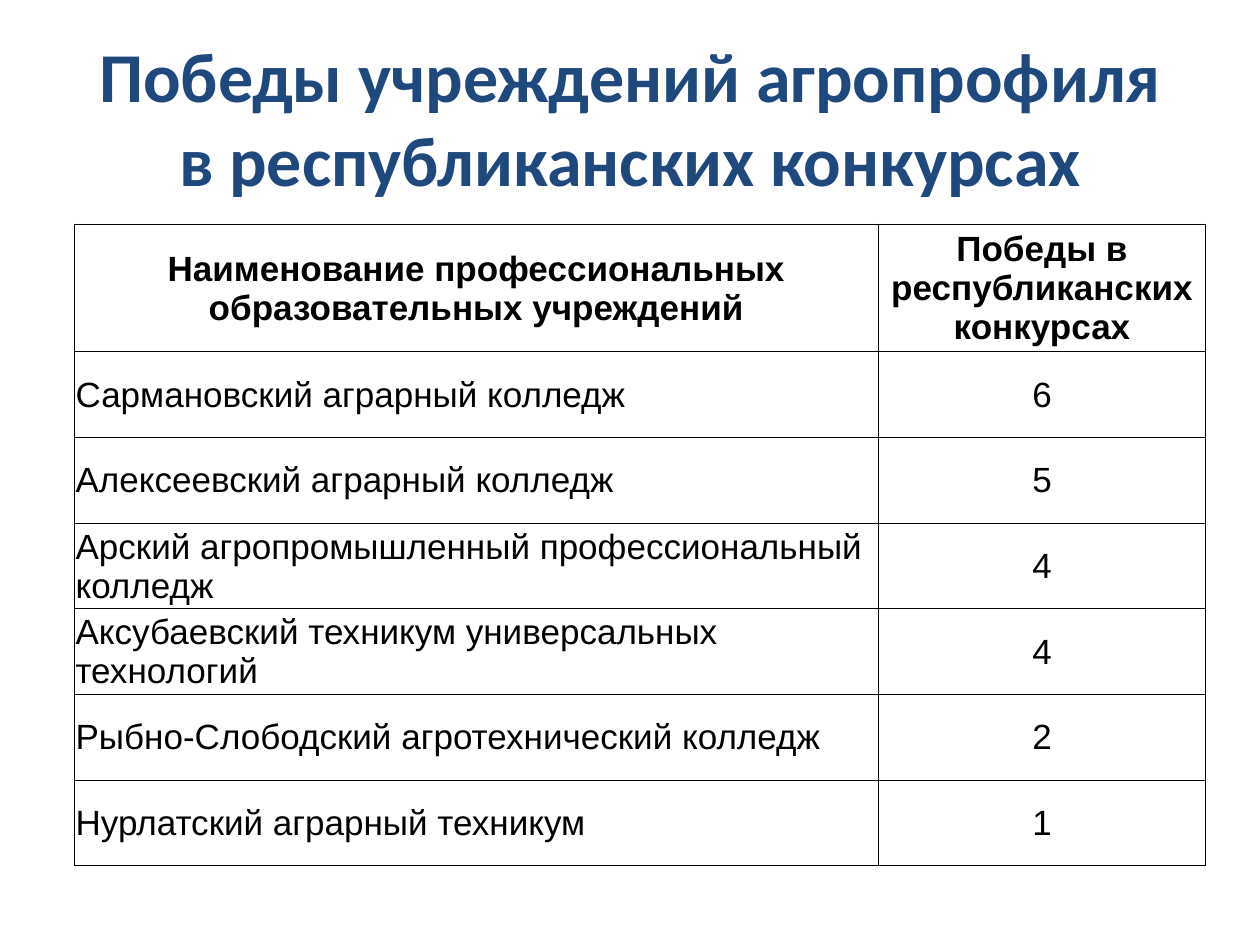
"""Build a slide with a table of agricultural colleges' wins in republican contests."""
from lxml.etree import SubElement
from pptx import Presentation
from pptx.dml.color import RGBColor
from pptx.enum.text import MSO_ANCHOR as Anchor, PP_ALIGN as Align
from pptx.oxml.ns import qn
from pptx.util import Inches, Pt

TITLE = "Победы учреждений агропрофиля в республиканских конкурсах"
HEADER = (
    "Наименование профессиональных образовательных учреждений",
    "Победы в республиканских конкурсах",
)
WINS = [
    ("Сармановский аграрный колледж", 6),
    ("Алексеевский аграрный колледж", 5),
    ("Арский агропромышленный профессиональный колледж", 4),
    ("Аксубаевский техникум универсальных технологий", 4),
    ("Рыбно-Слободский агротехнический колледж", 2),
    ("Нурлатский аграрный техникум", 1),
]
COLORS = {"title": "1F497D", "text": "000000", "border": "000000"}
SLIDE_WIDTH, SLIDE_HEIGHT = 10, 7.5
TITLE_BOX = (0.5, 0.3, 0.9 * SLIDE_WIDTH, SLIDE_HEIGHT / 6)
TABLE_LEFT, TABLE_TOP = 0.59, 1.78
COLUMN_WIDTHS = (6.38, 2.6)
ROW_HEIGHTS = [0.96] + [0.68] * len(WINS)
CELL_INSET = 0.01
BORDER_WIDTH = 0.5


def format_text(text_frame, font_name, size, color, bold, align):
    for paragraph in text_frame.paragraphs:
        paragraph.alignment = align
        for run in paragraph.runs:
            font = run.font
            font.name, font.size, font.bold = font_name, Pt(size), bold
            font.color.rgb = RGBColor.from_string(COLORS[color])


def add_borders(cell):
    properties = cell._tc.get_or_add_tcPr()
    for side in ("lnL", "lnR", "lnT", "lnB"):
        line = SubElement(properties, qn(f"a:{side}"), w=str(Pt(BORDER_WIDTH)))
        fill = SubElement(line, qn("a:solidFill"))
        SubElement(fill, qn("a:srgbClr"), val=COLORS["border"])


def add_title(slide):
    text_frame = slide.shapes.add_textbox(*map(Inches, TITLE_BOX)).text_frame
    text_frame.word_wrap = True
    text_frame.vertical_anchor = Anchor.MIDDLE
    text_frame.text = TITLE
    format_text(text_frame, "Calibri", 40, "title", True, Align.CENTER)


def fill_cell(cell, value, is_header, align):
    cell.text = str(value)
    cell.vertical_anchor = Anchor.MIDDLE
    cell.margin_left = cell.margin_right = cell.margin_top = Inches(CELL_INSET)
    cell.margin_bottom = 0
    format_text(cell.text_frame, "Arial", 20, "text", is_header, align)
    add_borders(cell)
    cell.fill.background()


def add_wins_table(slide):
    box = (TABLE_LEFT, TABLE_TOP, sum(COLUMN_WIDTHS), sum(ROW_HEIGHTS))
    table = slide.shapes.add_table(
        len(ROW_HEIGHTS), len(COLUMN_WIDTHS), *map(Inches, box)
    ).table
    table.first_row = table.horz_banding = False
    for column, width in zip(table.columns, COLUMN_WIDTHS):
        column.width = Inches(width)
    for row, height in zip(table.rows, ROW_HEIGHTS):
        row.height = Inches(height)
    for row_index, values in enumerate([HEADER, *WINS]):
        is_header = row_index == 0
        for column_index, value in enumerate(values):
            align = Align.CENTER if is_header or column_index else Align.LEFT
            fill_cell(table.cell(row_index, column_index), value, is_header, align)


def main():
    presentation = Presentation()
    presentation.slide_width = Inches(SLIDE_WIDTH)
    presentation.slide_height = Inches(SLIDE_HEIGHT)
    slide = presentation.slides.add_slide(presentation.slide_layouts[6])
    add_title(slide)
    add_wins_table(slide)
    presentation.save("out.pptx")


if __name__ == "__main__":
    main()
